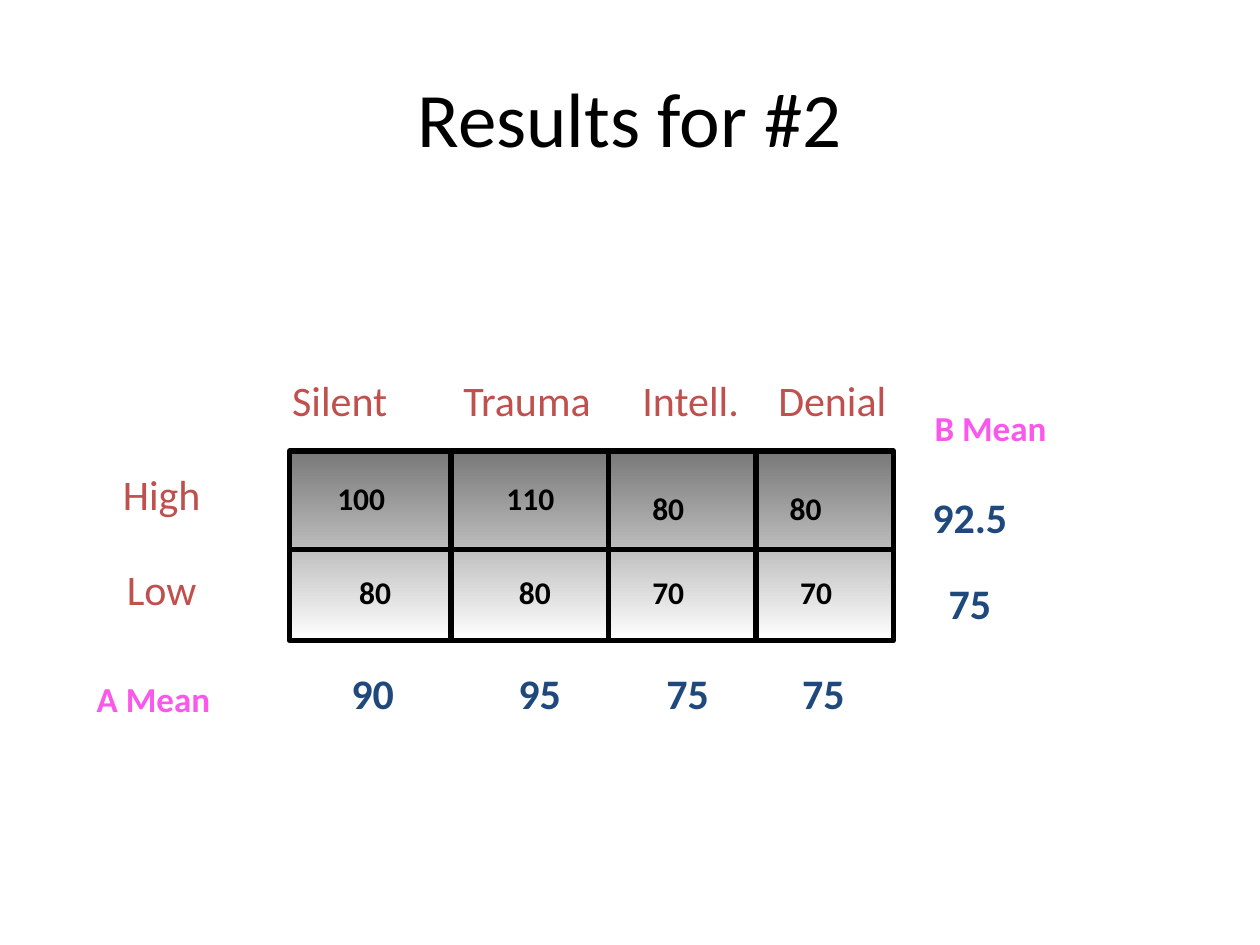
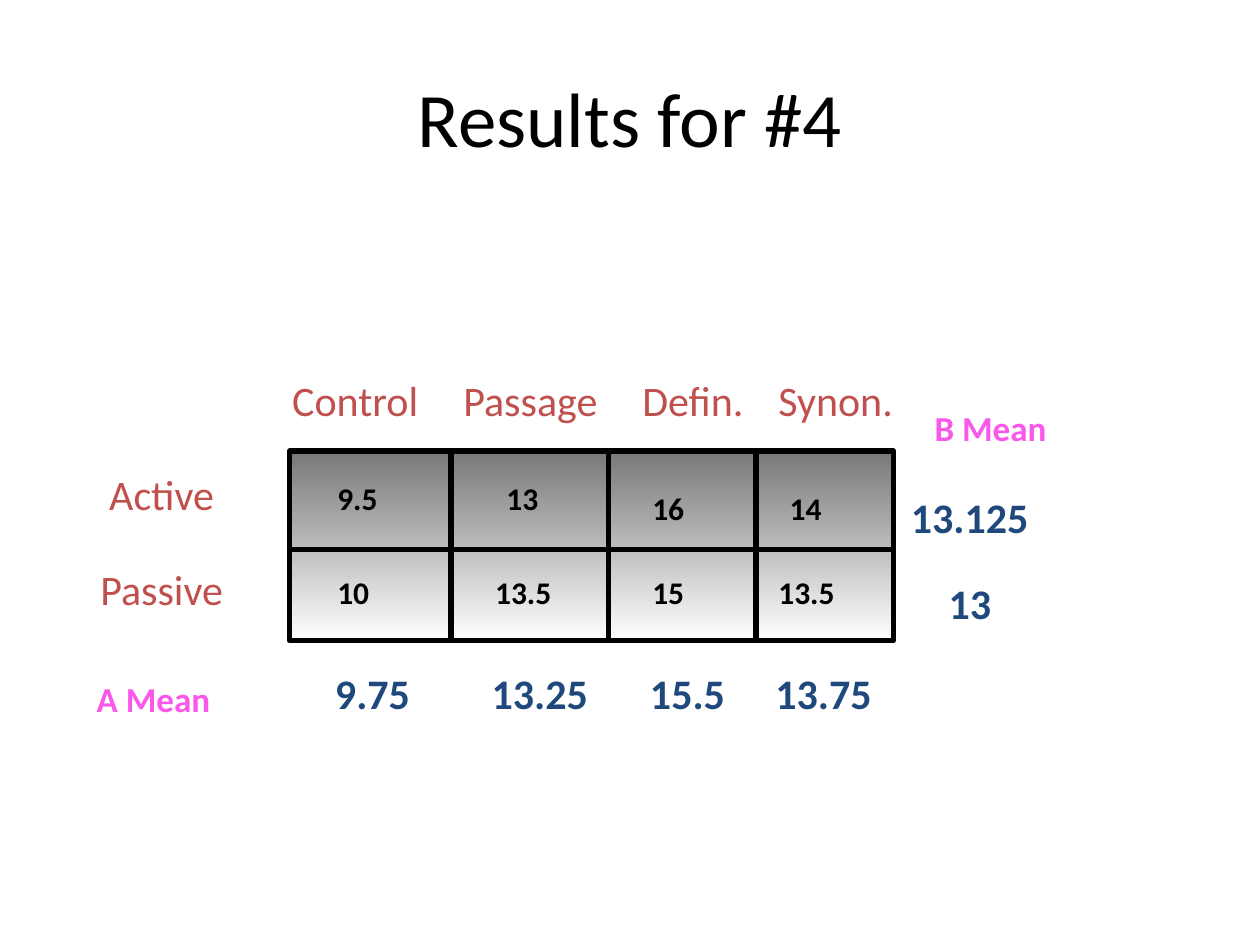
from lxml import etree
from pptx import Presentation
from pptx.dml.color import RGBColor
from pptx.enum.shapes import MSO_CONNECTOR, MSO_SHAPE
from pptx.enum.text import MSO_ANCHOR, PP_ALIGN
from pptx.oxml.ns import qn
from pptx.util import Cm, Pt

LEFT, CENTER = PP_ALIGN.LEFT, PP_ALIGN.CENTER
MIDDLE, TOP = MSO_ANCHOR.MIDDLE, MSO_ANCHOR.TOP
RECTANGLE, STRAIGHT = MSO_SHAPE.RECTANGLE, MSO_CONNECTOR.STRAIGHT

BLACK = RGBColor(0x00, 0x00, 0x00)
RED = RGBColor(0xC0, 0x50, 0x4D)
BLUE = RGBColor(0x1F, 0x49, 0x7D)
PINK = RGBColor(0xFA, 0x58, 0xEB)
GREY = RGBColor(0x78, 0x78, 0x78)
WHITE = RGBColor(0xFF, 0xFF, 0xFF)

# Labels are (text, box width in cm); low_lefts are the left edges of the lower cells.
RESULTS = [
    {
        "title": "Results for #2",
        "columns": [("Silent", 2.64), ("Trauma", 3.43), ("Intell.", 2.54), ("Denial", 2.92)],
        "rows": [("High", 2.26), ("Low", 2.06)],
        "high": ["100", "110", "80", "80"],
        "low": ["80", "80", "70", "70"],
        "low_lefts": [6.99, 10.21, 12.9, 15.88],
        "a_means": ["90", "95", "75", "75"],
        "b_means": ["92.5", "75"],
    },
    {
        "title": "Results for #4",
        "columns": [("Control", 3.25), ("Passage", 3.81), ("Defin.", 2.72), ("Synon.", 3.15)],
        "rows": [("Active", 2.82), ("Passive", 3.48)],
        "high": ["9.5", "13", "16", "14"],
        "low": ["10", "13.5", "15", "13.5"],
        "low_lefts": [6.55, 9.73, 12.9, 15.44],
        "a_means": ["9.75", "13.25", "15.5", "13.75"],
        "b_means": ["13.125", "13"],
    },
]

# Text styles
TITLE = {"size": Pt(44), "color": BLACK, "bold": False}
LABEL = {"size": Pt(24), "color": RED, "bold": False}
CELL = {"size": Pt(18), "color": BLACK, "bold": True}
MEAN = {"size": Pt(24), "color": BLUE, "bold": True}
MEAN_LABEL = {"size": Pt(20), "color": PINK, "bold": True}
HEIGHTS = {Pt(24): 1.27, Pt(20): 1.1, Pt(18): 1.02}

# Places in cm
GRID_LEFT, GRID_TOP, GRID_RIGHT, GRID_BOTTOM = 5.84, 9.09, 18.01, 12.92
ROW_LINE = 11.07
COLUMN_LINES = [9.09, 12.27, 15.24]
COLUMN_LABEL_LEFTS = [5.64, 9.09, 12.7, 15.44]
COLUMN_LABEL_TOP = 7.43
ROW_LABEL_CENTER, ROW_LABEL_TOPS = 3.26, [9.32, 11.23]
HIGH_LEFTS, HIGH_TOPS = [6.55, 9.96, 12.9, 15.67], [9.53, 9.53, 9.73, 9.73]
LOW_TOP = 11.43
A_MEAN_CENTERS, A_MEAN_TOP = [7.51, 10.88, 13.86, 16.6], 13.34
B_MEAN_CENTER, B_MEAN_TOPS = 19.55, [9.78, 11.51]
MEAN_LABELS = [("A Mean", 1.7, 13.54), ("B Mean", 18.59, 8.08)]
MEAN_LABEL_WIDTH = 3.02


def number_width(text, style):
    """Box width in cm: side insets plus digits, a point being half a digit."""
    digits = len(text) - 0.5 * text.count(".")
    return 0.51 + digits * 0.0196 * style["size"].pt


def add_text(slide, text, box, style, align=LEFT, anchor=TOP, wrap=False):
    shape = slide.shapes.add_textbox(*(Cm(length) for length in box))
    frame = shape.text_frame
    frame.word_wrap = wrap
    frame.vertical_anchor = anchor
    paragraph = frame.paragraphs[0]
    paragraph.alignment = align
    run = paragraph.add_run()
    run.text = text
    run.font.name = "Calibri"
    for name, value in style.items():
        if name == "color":
            run.font.color.rgb = value
        else:
            setattr(run.font, name, value)


def add_label(slide, text, left, top, width, style):
    add_text(slide, text, (left, top, width, HEIGHTS[style["size"]]), style)


def add_centered(slide, text, center, top, width, style):
    box = (center - width / 2, top, width, HEIGHTS[style["size"]])
    add_text(slide, text, box, style, CENTER)


def add_grid(slide):
    grid = slide.shapes.add_shape(
        RECTANGLE, Cm(GRID_LEFT), Cm(GRID_TOP),
        Cm(GRID_RIGHT - GRID_LEFT), Cm(GRID_BOTTOM - GRID_TOP))
    grid.shadow.inherit = False
    grid.fill.gradient()
    grid.fill.gradient_angle = 270
    for stop, color in zip(grid.fill.gradient_stops, (GREY, WHITE)):
        stop.color.rgb = color
    grid.line.color.rgb = BLACK
    grid.line.width = Pt(3)

    lines = [(GRID_LEFT, ROW_LINE, GRID_RIGHT, ROW_LINE)]
    lines += [(x, GRID_TOP, x, GRID_BOTTOM) for x in COLUMN_LINES]
    for ends in lines:
        connector = slide.shapes.add_connector(STRAIGHT, *(Cm(end) for end in ends))
        connector.line.color.rgb = BLACK
        connector.line.width = Pt(3)
        etree.SubElement(connector._element.spPr, qn("a:effectLst"))


def add_results_slide(presentation, results):
    slide = presentation.slides.add_slide(presentation.slide_layouts[6])
    add_text(slide, results["title"], (1.27, 0.76, 22.86, 3.18), TITLE, CENTER, MIDDLE, True)
    add_grid(slide)

    for (text, width), left in zip(results["columns"], COLUMN_LABEL_LEFTS):
        add_label(slide, text, left, COLUMN_LABEL_TOP, width, LABEL)
    for (text, width), top in zip(results["rows"], ROW_LABEL_TOPS):
        add_centered(slide, text, ROW_LABEL_CENTER, top, width, LABEL)

    cells = list(zip(results["high"], HIGH_LEFTS, HIGH_TOPS))
    cells += [(text, left, LOW_TOP) for text, left in zip(results["low"], results["low_lefts"])]
    for text, left, top in cells:
        add_label(slide, text, left, top, number_width(text, CELL), CELL)

    means = [(text, center, A_MEAN_TOP)
             for text, center in zip(results["a_means"], A_MEAN_CENTERS)]
    means += [(text, B_MEAN_CENTER, top)
              for text, top in zip(results["b_means"], B_MEAN_TOPS)]
    for text, center, top in means:
        add_centered(slide, text, center, top, number_width(text, MEAN), MEAN)
    for text, left, top in MEAN_LABELS:
        add_label(slide, text, left, top, MEAN_LABEL_WIDTH, MEAN_LABEL)


def main():
    presentation = Presentation()
    presentation.slide_width, presentation.slide_height = Cm(25.4), Cm(19.05)
    for results in RESULTS:
        add_results_slide(presentation, results)
    presentation.save("out.pptx")


if __name__ == "__main__":
    main()
